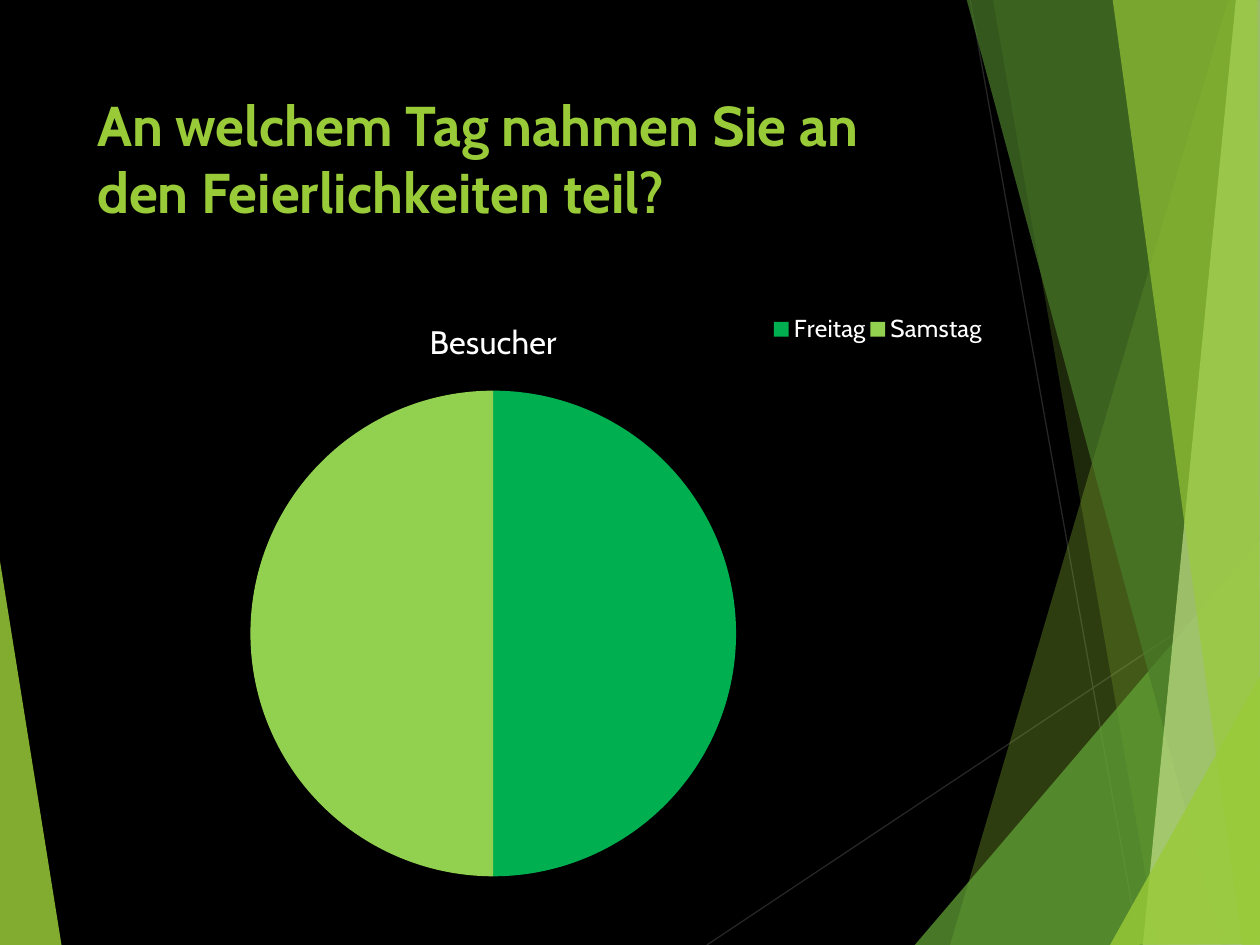
"""Build a survey slide with a pie chart of visitors per day."""
import pptx
import pptx.chart.data
import pptx.dml.color
import pptx.enum.chart
import pptx.enum.shapes
import pptx.enum.text
import pptx.oxml
import pptx.oxml.ns
import pptx.util
from pptx.util import Inches

COLORS = {
    "black": "000000", "white": "FFFFFF", "hairline": "262626",
    "lime": "99CB38", "green": "63A537", "dark": "4A7C29", "pale": "C2E088",
    "friday": "00B050", "saturday": "92D050",
}
FONT = "Cabin"
NS = pptx.oxml.ns.nsdecls("a", "c")


def rgb(name):
    return pptx.dml.color.RGBColor.from_string(COLORS[name])


def set_font(font, size, color="white", bold=False):
    font.name = FONT
    font.size = pptx.util.Pt(size)
    font.bold = bold
    font.color.rgb = rgb(color)


prs = pptx.Presentation()
prs.slide_width, prs.slide_height = Inches(10), Inches(7.5)
s = prs.slides.add_slide(prs.slide_layouts[5])
s.background.fill.solid()
s.background.fill.fore_color.rgb = rgb("black")

for x1, y1, x2, y2 in [(5.61, 7.5, 10.01, 4.57), (7.7, 0, 9.04, 7.5)]:
    line = s.shapes.add_connector(
        pptx.enum.shapes.MSO_CONNECTOR.STRAIGHT,
        Inches(x1), Inches(y1), Inches(x2), Inches(y2))
    line.line.color.rgb = rgb("hairline")
    line.line.width = pptx.util.Pt(0.75)
    line._element.spPr.append(pptx.oxml.parse_xml(f"<a:effectLst {NS}/>"))

facets = [
    ("lime", 85, [(-0.01, 4.39), (0.49, 7.51), (-0.01, 7.5)]),
    ("lime", 30, [(9.75, 0), (7.54, 7.5), (10.02, 7.51), (10.01, 0.01)]),
    ("lime", 20, [(7.88, -0.01), (9.19, 7.5), (10.01, 7.5), (10.01, -0.01)]),
    ("green", 72, [(7.26, 7.5), (10, 4.29), (10.01, 7.5)]),
    ("dark", 70, [(7.67, -0.01), (9.7, 7.5), (10.01, 7.49), (10.01, -0.01)]),
    ("pale", 70, [(9.81, -0.01), (9.07, 7.5), (10.01, 7.5), (10, -0.01)]),
    ("lime", 65, [(8.83, -0.01), (9.86, 7.5), (10, 7.5), (9.98, -0.01)]),
    ("lime", 80, [(8.81, 7.5), (10.01, 5.35), (10.01, 7.49)]),
]
for color, opacity, points in facets:
    corners = [(Inches(x), Inches(y)) for x, y in points]
    builder = s.shapes.build_freeform(*corners[0])
    builder.add_line_segments(corners[1:], close=True)
    sp = builder.convert_to_shape()
    sp.shadow.inherit = False
    sp.line.fill.background()
    sp.fill.solid()
    sp.fill.fore_color.rgb = rgb(color)
    clr = sp._element.spPr.find(".//" + pptx.oxml.ns.qn("a:srgbClr"))
    clr.append(pptx.oxml.parse_xml(f'<a:alpha {NS} val="{opacity * 1000}"/>'))

title = s.shapes.title
title.left, title.top = Inches(0.67), Inches(0.67)
title.width, title.height = Inches(6.94), Inches(1.44)
tf = title.text_frame
tf.text = "An welchem Tag nahmen Sie an den Feierlichkeiten teil?"
tf.word_wrap = True
tf.auto_size = pptx.enum.text.MSO_AUTO_SIZE.NONE
tf.vertical_anchor = pptx.enum.text.MSO_ANCHOR.TOP
p = tf.paragraphs[0]
p.alignment = pptx.enum.text.PP_ALIGN.LEFT
set_font(p.runs[0].font, 32, "lime", True)

data = pptx.chart.data.CategoryChartData()
data.categories = ["Freitag", "Samstag"]
data.add_series("Besucher", (50, 50))
chart = s.shapes.add_chart(
    pptx.enum.chart.XL_CHART_TYPE.PIE,
    Inches(0), Inches(2.33), Inches(7.83), Inches(5.14), data).chart
set_font(chart.font, 10)
chart.has_title = True
tf = chart.chart_title.text_frame
tf.text = "Besucher"
set_font(tf.paragraphs[0].runs[0].font, 18.6)
chart.chart_title.include_in_layout = False

chart.has_legend = True
chart.legend.position = pptx.enum.chart.XL_LEGEND_POSITION.BOTTOM
chart.legend.include_in_layout = False
set_font(chart.legend.font, 14)

plot = chart.plots[0]
plot.vary_by_categories = True
for i, color in enumerate(["friday", "saturday"]):
    fill = plot.series[0].points[i].format.fill
    fill.solid()
    fill.fore_color.rgb = rgb(color)

plot_area = chart._chartSpace.chart.plotArea
for old in plot_area.findall(pptx.oxml.ns.qn("c:layout")):
    plot_area.remove(old)
legend = chart.legend._element
for old in legend.findall(pptx.oxml.ns.qn("c:layout")):
    legend.remove(old)
for parent, index, target, box in [
    (plot_area, 0, '<c:layoutTarget val="inner"/>', (0.25, 0.15, 0.5, 0.75)),
    (legend, 1, "", (0.78, 0.02, 0.22, 0.07)),
]:
    sizes = "".join(f'<c:{k} val="{v}"/>' for k, v in zip("xywh", box))
    parent.insert(index, pptx.oxml.parse_xml(
        f'<c:layout {NS}><c:manualLayout>{target}<c:xMode val="edge"/>'
        f'<c:yMode val="edge"/>{sizes}</c:manualLayout></c:layout>'))

prs.save("out.pptx")
